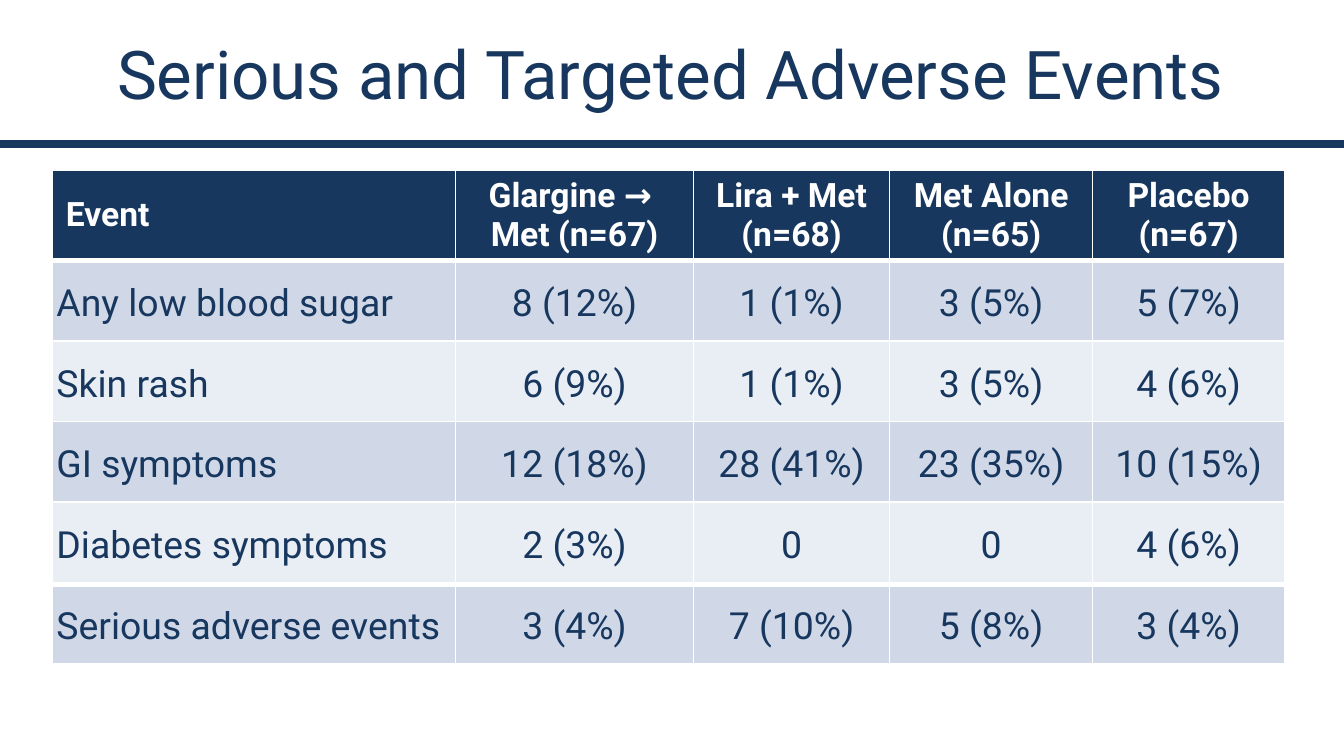
import lxml.etree
import pptx
import pptx.dml.color
import pptx.enum.shapes
import pptx.enum.text
import pptx.oxml.ns
import pptx.util

Inches = pptx.util.Inches
Pt = pptx.util.Pt
qn = pptx.oxml.ns.qn
CENTER = pptx.enum.text.PP_ALIGN.CENTER
LEFT = pptx.enum.text.PP_ALIGN.LEFT
MIDDLE = pptx.enum.text.MSO_ANCHOR.MIDDLE

NAVY, WHITE = "17375E", "FFFFFF"
BAND_FILLS = ["D0D8E8", "E9EDF4"]
HEADER_FONT = {"name": "Roboto", "size": Pt(18), "bold": True}
BODY_FONT = {"name": "Roboto", "size": Pt(20), "bold": False}
TITLE_FONT = {"name": "Roboto", "size": Pt(36), "bold": False}
COLUMN_WIDTHS = [3, 1.77, 1.46, 1.51, 1.43]
# The header row grows to fit its two lines of text.
ROW_HEIGHTS = [0.41] + [0.6] * 5
TABLE_HEIGHT = 3.67
# "\v" breaks a line inside a paragraph; "\n" starts a new paragraph.
EVENTS = [
    ["Event", "Glargine → \vMet (n=67)", "Lira + Met\n(n=68)",
     "Met Alone\v(n=65)", "Placebo\v(n=67)"],
    ["Any low blood sugar", "8 (12%)", "1 (1%)", "3 (5%)", "5 (7%)"],
    ["Skin rash", "6 (9%)", "1 (1%)", "3 (5%)", "4 (6%)"],
    ["GI symptoms", "12 (18%)", "28 (41%)", "23 (35%)", "10 (15%)"],
    ["Diabetes symptoms", "2 (3%)", "0", "0", "4 (6%)"],
    ["Serious adverse events", "3 (4%)", "7 (10%)", "5 (8%)", "3 (4%)"],
]


def color(value):
    return pptx.dml.color.RGBColor.from_string(value)


def style_text(frame, font, font_color, align, line_spacing):
    for para in frame.paragraphs:
        para.alignment = align
        para.line_spacing = line_spacing
        for span in para.runs:
            for name, value in font.items():
                setattr(span.font, name, value)
            span.font.color.rgb = color(font_color)


deck = pptx.Presentation()
deck.slide_width = Inches(10)
deck.slide_height = deck.slide_width * 9 // 16
slide = deck.slides.add_slide(deck.slide_layouts[6])

# Rule under the title, and divider above the serious events
rules = [(0, 10, 1.07, NAVY, 4.5), (0.39, 9.56, 4.35, WHITE, 3)]

# Table
table_frame = slide.shapes.add_table(
    len(ROW_HEIGHTS), len(COLUMN_WIDTHS), Inches(0.39), Inches(1.27),
    Inches(sum(COLUMN_WIDTHS)), Inches(TABLE_HEIGHT))
table = table_frame.table
for column, width in zip(table.columns, COLUMN_WIDTHS):
    column.width = Inches(width)
for row, height in zip(table.rows, ROW_HEIGHTS):
    row.height = Inches(height)
table_frame.height = Inches(TABLE_HEIGHT)

for row_index, texts in enumerate(EVENTS):
    is_header = row_index == 0
    for column_index, text in enumerate(texts):
        cell = table.cell(row_index, column_index)
        cell.text = text
        cell.vertical_anchor = MIDDLE
        side, edge = (0.07, 0.04) if is_header else (0.03, 0)
        cell.margin_left = cell.margin_right = Inches(side)
        cell.margin_top = cell.margin_bottom = Inches(edge)
        style_text(cell.text_frame, HEADER_FONT if is_header else BODY_FONT,
                   WHITE if is_header else NAVY,
                   CENTER if column_index else LEFT,
                   1.0 if is_header else 1.15)

        # Borders come before the fill in the cell properties
        properties = cell._tc.get_or_add_tcPr()
        for tag in ["a:lnL", "a:lnR", "a:lnT", "a:lnB"]:
            thick = (row_index, tag) in [(0, "a:lnB"), (1, "a:lnT")]
            border = lxml.etree.SubElement(
                properties, qn(tag), w=str(Pt(3 if thick else 1)))
            fill = lxml.etree.SubElement(border, qn("a:solidFill"))
            lxml.etree.SubElement(fill, qn("a:srgbClr"), val=WHITE)
        cell.fill.solid()
        cell.fill.fore_color.rgb = color(
            NAVY if is_header else BAND_FILLS[(row_index - 1) % 2])
table.cell(0, 0).margin_left = Inches(0.1)

# Title
title = slide.shapes.add_textbox(
    Inches(0.49), Inches(0.07), Inches(9), Inches(0.94))
title.text_frame.word_wrap = True
title.text_frame.vertical_anchor = MIDDLE
title.text_frame.text = "Serious and Targeted Adverse Events"
style_text(title.text_frame, TITLE_FONT, NAVY, CENTER, 1.0)

for left, right, top, line_color, weight in rules:
    rule = slide.shapes.add_connector(
        pptx.enum.shapes.MSO_CONNECTOR.STRAIGHT,
        Inches(left), Inches(top), Inches(right), Inches(top))
    rule.line.color.rgb = color(line_color)
    rule.line.width = Pt(weight)
    lxml.etree.SubElement(rule._element.spPr, qn("a:effectLst"))

deck.save("out.pptx")
